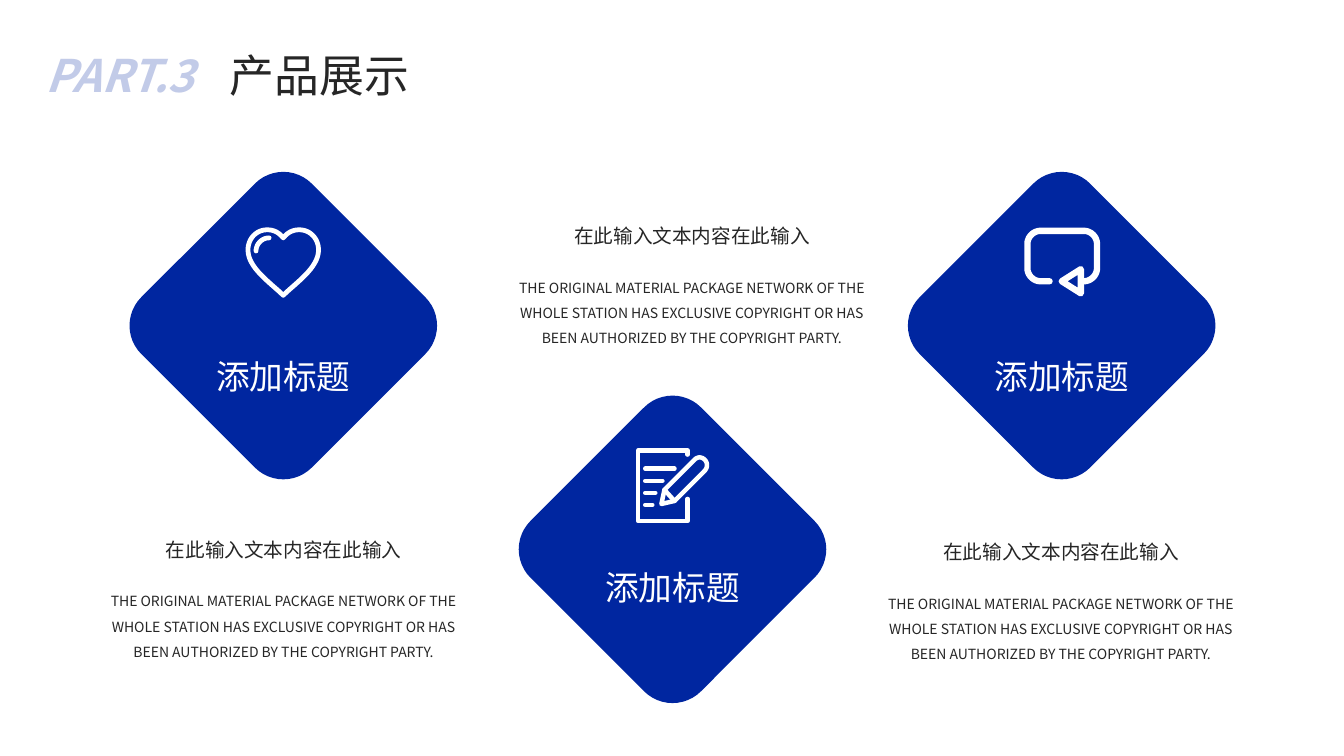
from dataclasses import dataclass
from lxml.etree import SubElement
from pptx import Presentation
from pptx.dml.color import RGBColor
from pptx.enum.shapes import MSO_SHAPE
from pptx.enum.text import MSO_ANCHOR, MSO_AUTO_SIZE, PP_ALIGN
from pptx.oxml.ns import qn
from pptx.util import Inches, Pt


@dataclass(frozen=True)
class Theme:
    face: str = "Noto Sans CJK SC"
    blue: RGBColor = RGBColor(0x00, 0x26, 0xA0)
    ink: RGBColor = RGBColor(0x26, 0x26, 0x26)
    white: RGBColor = RGBColor(0xFF, 0xFF, 0xFF)
    part_alpha: int = 24
    title_size: int = 32
    label_size: int = 24
    heading_size: int = 14
    copy_size: int = 10


THEME = Theme()
TILE_SIDE = 2.39
ICON_WIDTH = 0.74
LABEL_BOX = (1.79, 0.4)
HEADING = "在此输入文本内容在此输入"
COPY = ("THE ORIGINAL MATERIAL PACKAGE NETWORK OF THE WHOLE STATION HAS EXCLUSIVE "
        "COPYRIGHT OR HAS BEEN AUTHORIZED BY THE COPYRIGHT PARTY.")

HEART = [
    [(0.37, 0.67), (0.25, 0.55, 0.02, 0.4, 0.02, 0.22),
     (0.02, 0.11, 0.1, 0.02, 0.21, 0.02), (0.28, 0.02, 0.33, 0.05, 0.37, 0.1),
     (0.41, 0.05, 0.46, 0.02, 0.53, 0.02), (0.64, 0.02, 0.72, 0.11, 0.72, 0.22),
     (0.72, 0.4, 0.49, 0.55, 0.37, 0.67)],
    [(0.1, 0.23), (0.1, 0.16, 0.16, 0.1, 0.23, 0.1)],
]
NOTE_LINES = [(0.2, 0.39), (0.32, 0.27), (0.44, 0.2), (0.56, 0.17)]
NOTE = [
    [(0.52, 0.06), (0.52, 0.02), (0.03, 0.02), (0.03, 0.72), (0.52, 0.72), (0.52, 0.5)],
    [(0.26, 0.55), (0.29, 0.41), (0.58, 0.12), (0.65, 0.03, 0.77, 0.15, 0.68, 0.23),
     (0.39, 0.52), (0.26, 0.55)],
    [(0.29, 0.41), (0.39, 0.52)],
    *[[(0.1, y), (right, y)] for y, right in NOTE_LINES],
]
BUBBLE = [
    [(0.25, 0.53), (0.16, 0.53), (0.09, 0.53, 0.03, 0.47, 0.03, 0.4), (0.03, 0.16),
     (0.03, 0.09, 0.09, 0.03, 0.16, 0.03), (0.59, 0.03),
     (0.66, 0.03, 0.72, 0.09, 0.72, 0.16), (0.72, 0.4),
     (0.72, 0.47, 0.66, 0.53, 0.59, 0.53)],
    [(0.56, 0.41), (0.56, 0.65), (0.37, 0.53), (0.56, 0.41)],
]

TILES = [
    {"center": (2.81, 3.23), "strokes": HEART, "weight": 3.4, "icon_rise": 0.97, "label_drop": 0.3},
    {"center": (6.67, 5.45), "strokes": NOTE, "weight": 3.2, "icon_rise": 1.0, "label_drop": 0.17},
    {"center": (10.53, 3.23), "strokes": BUBBLE, "weight": 4.5, "icon_rise": 0.97, "label_drop": 0.3},
]
COPY_ORIGINS = [(5.05, 2.06), (1.0, 5.17), (8.71, 5.19)]


def apply_format(target, values):
    for name, value in values.items():
        setattr(target, name, value)


def write_text(holder, text, size, color, align=PP_ALIGN.LEFT, spacing=1.0,
               inset=None, **font_values):
    frame = holder.text_frame
    apply_format(frame, {"word_wrap": True, "auto_size": MSO_AUTO_SIZE.NONE,
                         "vertical_anchor": MSO_ANCHOR.TOP})
    if inset is not None:
        apply_format(frame, {f"margin_{side}": Inches(inset)
                             for side in ("left", "top", "right", "bottom")})
    paragraph = frame.paragraphs[0]
    apply_format(paragraph, {"alignment": align, "line_spacing": spacing})
    run = paragraph.add_run()
    run.text = text
    run.font.color.rgb = color
    apply_format(run.font, {"name": THEME.face, "size": Pt(size), **font_values})
    SubElement(run.font._element, qn("a:ea"), typeface=THEME.face)
    return run


def add_text(slide, box, *content, **format_values):
    holder = slide.shapes.add_textbox(*map(Inches, box))
    return write_text(holder, *content, **format_values)


def flatten(stroke, steps=16):
    points = [stroke[0]]
    for segment in stroke[1:]:
        if len(segment) == 2:
            points.append(segment)
            continue
        start, first, second, end = points[-1], segment[:2], segment[2:4], segment[4:]
        for step in range(1, steps + 1):
            t = step / steps
            u = 1 - t
            points.append(tuple(
                u ** 3 * a + 3 * u * u * t * b + 3 * u * t * t * c + t ** 3 * d
                for a, b, c, d in zip(start, first, second, end)))
    return points


def draw_icon(slide, left, top, strokes, weight):
    builder = None
    for stroke in strokes:
        points = [(Inches(left + x), Inches(top + y)) for x, y in flatten(stroke)]
        if builder is None:
            builder = slide.shapes.build_freeform(*points[0])
        else:
            builder.move_to(*points[0])
        builder.add_line_segments(points[1:], close=stroke[0] == stroke[-1][-2:])
    icon = builder.convert_to_shape()
    icon.shadow.inherit = False
    icon.fill.background()
    icon.line.color.rgb = THEME.white
    icon.line.width = Pt(weight)
    outline = icon.line._get_or_add_ln()
    outline.set("cap", "rnd")
    SubElement(outline, qn("a:round"))


def draw_header(slide, left, top, height):
    part = add_text(slide, (left, top, 1.83, height), "PART.3", THEME.title_size,
                    THEME.blue, bold=True, italic=True)
    tint = part.font._element.find(f".//{qn('a:srgbClr')}")
    SubElement(tint, qn("a:alpha"), val=str(THEME.part_alpha * 1000))
    title = slide.shapes.title
    box = (left + 1.83, top, 7.68, height)
    apply_format(title, dict(zip(("left", "top", "width", "height"), map(Inches, box))))
    write_text(title, "产品展示", THEME.title_size, THEME.ink)


def draw_tile(slide, center, strokes, weight, icon_rise, label_drop):
    x, y = center
    half = TILE_SIDE / 2
    diamond = slide.shapes.add_shape(MSO_SHAPE.ROUNDED_RECTANGLE, *map(
        Inches, (x - half, y - half, TILE_SIDE, TILE_SIDE)))
    diamond.rotation = 45
    diamond.shadow.inherit = False
    diamond.fill.solid()
    diamond.fill.fore_color.rgb = THEME.blue
    diamond.line.fill.background()
    draw_icon(slide, x - ICON_WIDTH / 2, y - icon_rise, strokes, weight)
    width, height = LABEL_BOX
    add_text(slide, (x - width / 2, y + label_drop, width, height), "添加标题",
             THEME.label_size, THEME.white, align=PP_ALIGN.CENTER, inset=0)


def draw_copy(slide, left, top):
    centered = {"align": PP_ALIGN.CENTER, "spacing": 1.5}
    add_text(slide, (left + 0.38, top, 2.87, 0.42), HEADING,
             THEME.heading_size, THEME.ink, **centered)
    add_text(slide, (left, top + 0.58, 3.62, 1.11), COPY,
             THEME.copy_size, THEME.ink, **centered)


def main():
    deck = Presentation()
    apply_format(deck, {"slide_width": Inches(13.33), "slide_height": Inches(7.5)})
    slide = deck.slides.add_slide(deck.slide_layouts[5])
    draw_header(slide, 0.35, 0.42, 0.64)
    for tile in TILES:
        draw_tile(slide, **tile)
    for left, top in COPY_ORIGINS:
        draw_copy(slide, left, top)
    deck.save("out.pptx")


if __name__ == "__main__":
    main()
